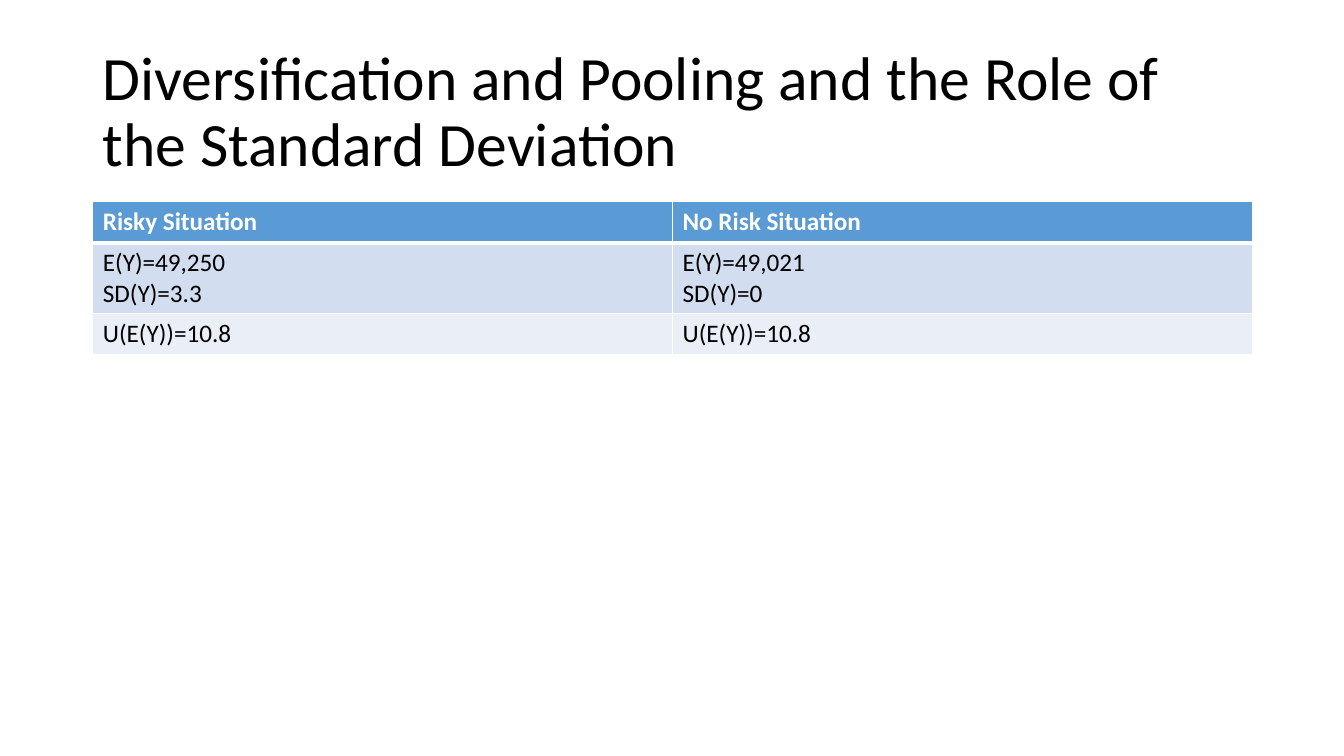
import pptx
import pptx.util
import pptx.dml.color
import pptx.enum.text
import lxml.etree
import pptx.oxml.ns

Inches, Pt = pptx.util.Inches, pptx.util.Pt
COLORS = {"text": "000000", "white": "FFFFFF", "header": "5B9BD5",
          "band_dark": "D2DEEF", "band_light": "EAEFF7"}
LEFT, WIDTH = 0.92, 11.5


def style_text(p, size, color, bold=False):
    for r in p.runs:
        r.font.name = "Calibri"
        r.font.size = Pt(size)
        r.font.bold = bold
        r.font.color.rgb = pptx.dml.color.RGBColor.from_string(COLORS[color])


def add_border(cell, side, width):
    qn = pptx.oxml.ns.qn
    ln = lxml.etree.SubElement(cell._tc.get_or_add_tcPr(), qn(f"a:ln{side}"), w=str(Pt(width)))
    fill = lxml.etree.SubElement(ln, qn("a:solidFill"))
    lxml.etree.SubElement(fill, qn("a:srgbClr"), val=COLORS["white"])


prs = pptx.Presentation()
prs.slide_width, prs.slide_height = Inches(13.33), Inches(7.5)
s = prs.slides.add_slide(prs.slide_layouts[6])

# Title
tf = s.shapes.add_textbox(Inches(LEFT), Inches(0.4), Inches(WIDTH), Inches(1.45)).text_frame
tf.word_wrap = True
tf.vertical_anchor = pptx.enum.text.MSO_ANCHOR.MIDDLE
tf.text = "Diversification and Pooling and the Role of the Standard Deviation"
tf.paragraphs[0].line_spacing = 0.9
style_text(tf.paragraphs[0], 44, "text")

# Comparison table: height, fill, text colour, cell texts
rows = [
    (0.41, "header", "white", ["Risky Situation", "No Risk Situation"]),
    (0.7, "band_dark", "text", ["E(Y)=49,250\nSD(Y)=3.3", "E(Y)=49,021\nSD(Y)=0"]),
    (0.41, "band_light", "text", ["U(E(Y))=10.8", "U(E(Y))=10.8"]),
]
table = s.shapes.add_table(len(rows), 2, Inches(LEFT), Inches(2), Inches(WIDTH),
                           Inches(sum(row[0] for row in rows))).table
for i, (height, fill, color, texts) in enumerate(rows):
    table.rows[i].height = Inches(height)
    for j, text in enumerate(texts):
        cell = table.cell(i, j)
        cell.text_frame.text = text
        for p in cell.text_frame.paragraphs:
            style_text(p, 18, color, bold=i == 0)
        # The rule under the header is thicker than the others
        for side, width in (("L", 1), ("R", 1), ("T", 3 if i == 1 else 1), ("B", 3 if i == 0 else 1)):
            add_border(cell, side, width)
        cell.fill.solid()
        cell.fill.fore_color.rgb = pptx.dml.color.RGBColor.from_string(COLORS[fill])

prs.save("out.pptx")
